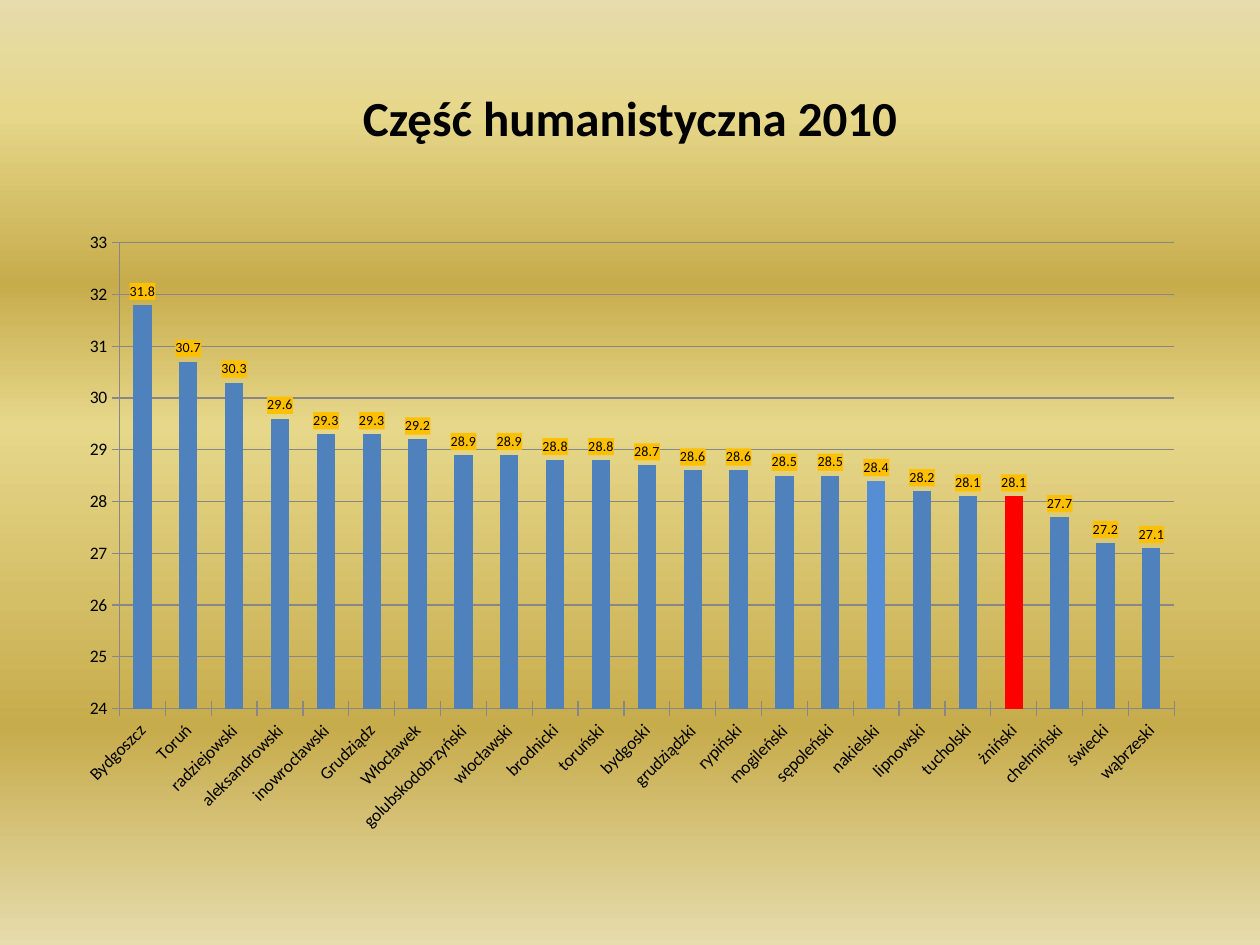
import pptx
import pptx.chart.data
import pptx.dml.color
import pptx.enum.chart
import pptx.enum.text
import pptx.oxml
import pptx.oxml.ns
import pptx.util
from pptx.util import Inches

RGBColor = pptx.dml.color.RGBColor
BLACK = RGBColor(0x00, 0x00, 0x00)
BLUE = RGBColor(0x4F, 0x81, 0xBD)
LIGHT = RGBColor(0x55, 0x8E, 0xD5)
RED = RGBColor(0xFF, 0x00, 0x00)
AMBER = RGBColor(0xFF, 0xC0, 0x00)
GRAY = RGBColor(0x87, 0x87, 0x87)
PALE = RGBColor(0xE6, 0xDC, 0xAC)
SAND = RGBColor(0xE6, 0xD7, 0x8A)
GOLD = RGBColor(0xC7, 0xAC, 0x4C)

STOPS = [(0, PALE), (12, SAND), (30, GOLD), (45, SAND), (77, GOLD), (100, PALE)]
SCORES = [
    ("Bydgoszcz", 31.8), ("Toruń", 30.7), ("radziejowski", 30.3),
    ("aleksandrowski", 29.6), ("inowrocławski", 29.3), ("Grudziądz", 29.3),
    ("Włocławek", 29.2), ("golubskodobrzyński", 28.9), ("włocławski", 28.9),
    ("brodnicki", 28.8), ("toruński", 28.8), ("bydgoski", 28.7),
    ("grudziądzki", 28.6), ("rypiński", 28.6), ("mogileński", 28.5),
    ("sępoleński", 28.5), ("nakielski", 28.4), ("lipnowski", 28.2),
    ("tucholski", 28.1), ("żniński", 28.1), ("chełmiński", 27.7),
    ("świecki", 27.2), ("wąbrzeski", 27.1),
]
MARKS = {"nakielski": LIGHT, "żniński": RED}


def parse(tag, body):
    return pptx.oxml.parse_xml(
        f'<{tag} {pptx.oxml.ns.nsdecls("a", "c")}>{body}</{tag.split()[0]}>')


def paint(slide):
    fill = slide.background.fill
    fill.gradient()
    fill.gradient_angle = 270
    stops = slide.element.find(".//" + pptx.oxml.ns.qn("a:gsLst"))
    for stop in list(stops):
        stops.remove(stop)
    for place, color in STOPS:
        stops.append(parse(f'a:gs pos="{place * 1000}"', f'<a:srgbClr val="{color}"/>'))


def add_title(slide, box):
    frame = slide.shapes.add_textbox(*box).text_frame
    frame.word_wrap = True
    frame.vertical_anchor = pptx.enum.text.MSO_ANCHOR.MIDDLE
    frame.text = "Część humanistyczna 2010"
    line = frame.paragraphs[0]
    line.alignment = pptx.enum.text.PP_ALIGN.CENTER
    font = line.runs[0].font
    font.name, font.size, font.bold = "Calibri", pptx.util.Pt(28), True
    font.color.rgb = BLACK


def style_axes(chart):
    for axis in (chart.category_axis, chart.value_axis):
        axis.major_tick_mark = pptx.enum.chart.XL_TICK_MARK.CROSS
        axis.minor_tick_mark = pptx.enum.chart.XL_TICK_MARK.NONE
        axis.format.line.color.rgb = GRAY
        axis.tick_labels.font.size = pptx.util.Pt(10)
    names = chart.category_axis.tick_labels.font
    names.color.rgb = BLACK
    body = chart.category_axis._element.find(".//" + pptx.oxml.ns.qn("a:bodyPr"))
    body.set("rot", "-2700000")
    scale = chart.value_axis
    scale.minimum_scale, scale.maximum_scale, scale.major_unit = 24, 33, 1
    scale.has_major_gridlines = True
    scale.major_gridlines.format.line.color.rgb = GRAY


def add_labels(series):
    labels = series.data_labels
    labels.show_value = True
    labels.position = pptx.enum.chart.XL_LABEL_POSITION.OUTSIDE_END
    labels.font.size = pptx.util.Pt(8)
    labels.font.color.rgb = BLACK
    text = labels._element.find(pptx.oxml.ns.qn("c:txPr"))
    text.addprevious(parse(
        "c:spPr", f'<a:solidFill><a:srgbClr val="{AMBER}"/></a:solidFill>'))


def add_bars(slide, box):
    data = pptx.chart.data.CategoryChartData()
    data.categories = [name for name, score in SCORES]
    data.add_series("Series 1", [score for name, score in SCORES])
    kind = pptx.enum.chart.XL_CHART_TYPE.COLUMN_CLUSTERED
    chart = slide.shapes.add_chart(kind, *box, data).chart
    chart.has_title = chart.has_legend = False
    chart.font.name, chart.font.size = "Calibri", pptx.util.Pt(10)
    chart.font.color.rgb = BLACK
    style_axes(chart)
    plot = chart.plots[0]
    plot.gap_width = 150
    plot.vary_by_categories = False
    series = plot.series[0]
    series.format.fill.solid()
    series.format.fill.fore_color.rgb = BLUE
    for spot, (name, score) in enumerate(SCORES):
        if name in MARKS:
            fill = series.points[spot].format.fill
            fill.solid()
            fill.fore_color.rgb = MARKS[name]
    add_labels(series)


def main():
    deck = pptx.Presentation()
    deck.slide_width, deck.slide_height = Inches(10), Inches(7.5)
    slide = deck.slides.add_slide(deck.slide_layouts[6])
    paint(slide)
    add_title(slide, (Inches(0.5), Inches(0.3), Inches(9), Inches(1.25)))
    add_bars(slide, (Inches(0.5), Inches(1.75), Inches(9), Inches(4.95)))
    deck.save("out.pptx")


if __name__ == "__main__":
    main()
